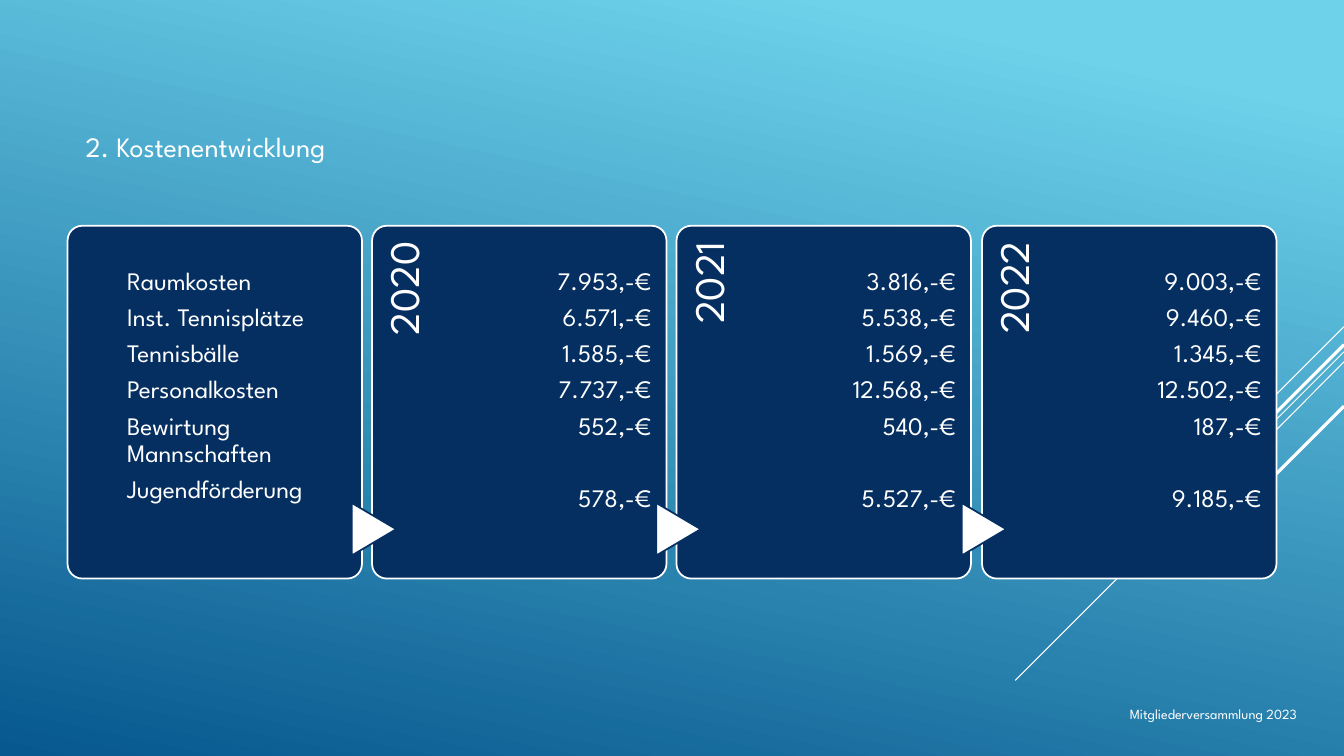
from dataclasses import dataclass

import pptx
import pptx.dml.color
import pptx.enum.dml
import pptx.enum.shapes
import pptx.enum.text
import pptx.oxml.ns
import pptx.util
from lxml import etree

ALIGN = pptx.enum.text.PP_ALIGN
SHAPE = pptx.enum.shapes.MSO_SHAPE
RGB = pptx.dml.color.RGBColor


@dataclass(frozen=True)
class Theme:
    font: str = "League Spartan"
    white: RGB = RGB(0xFF, 0xFF, 0xFF)
    navy: RGB = RGB(0x05, 0x2F, 0x61)
    sky: RGB = RGB(0x6E, 0xD2, 0xEB)
    deep: RGB = RGB(0x06, 0x58, 0x8E)
    title: int = 20
    body: int = 18
    year: int = 30
    footer: int = 10
    outline: float = 1.25


@dataclass(frozen=True)
class Box:
    left: int
    top: int
    width: int
    height: int


@dataclass(frozen=True)
class Ray:
    start: tuple[int, int]
    end: tuple[int, int]
    weight: float


@dataclass(frozen=True)
class Card:
    year: str
    entries: list[str]


THEME = Theme()
CARD_LEFT, CARD_TOP, CARD_W, CARD_H = 67, 224, 292, 350
CARD_SPAN = 907  # from the first card to the last
DEFAULT_INSETS = (10, 5, 10, 5)

RAYS = [
    Ray((1333, 324), (1233, 424), 0.75),
    Ray((1333, 349), (1007, 675), 0.75),
    Ray((1333, 359), (1126, 567), 0.75),
    Ray((1333, 342), (1142, 533), 2.25),
    Ray((1333, 403), (1194, 542), 2.25),
]
CARDS = [
    Card("", ["Raumkosten", "Inst. Tennisplätze", "Tennisbälle", "Personalkosten",
              "Bewirtung Mannschaften", "Jugendförderung"]),
    Card("2020", ["7.953,-€", "6.571,-€", "1.585,-€", "7.737,-€", "552,-€", "578,-€"]),
    Card("2021", ["3.816,-€", "5.538,-€", "1.569,-€", "12.568,-€", "540,-€", "5.527,-€"]),
    Card("2022", ["9.003,-€", "9.460,-€", "1.345,-€", "12.502,-€", "187,-€", "9.185,-€"]),
]


def px(n: int) -> pptx.util.Emu:
    return pptx.util.Emu(n * 9144)


def place(box: Box) -> list[pptx.util.Emu]:
    return [px(n) for n in (box.left, box.top, box.width, box.height)]


def add_text(s, box: Box, lines: list[str], size: int, align=ALIGN.LEFT,
             insets: tuple[int, int, int, int] = DEFAULT_INSETS):
    sp = s.shapes.add_textbox(*place(box))
    tf = sp.text_frame
    tf.word_wrap = True
    tf.margin_left, tf.margin_top, tf.margin_right, tf.margin_bottom = map(px, insets)
    for i, line in enumerate(lines):
        p = tf.paragraphs[0] if i == 0 else tf.add_paragraph()
        p.text = line
        p.alignment = align
        p.font.name = THEME.font
        p.font.size = pptx.util.Pt(size)
        p.font.color.rgb = THEME.white
    return sp


def add_shape(s, kind, box: Box, fill: RGB, line: RGB):
    sp = s.shapes.add_shape(kind, *place(box))
    sp.shadow.inherit = False
    sp.fill.solid()
    sp.fill.fore_color.rgb = fill
    sp.line.color.rgb = line
    sp.line.width = pptx.util.Pt(THEME.outline)
    return sp


def add_ray(s, ray: Ray) -> None:
    line = s.shapes.add_connector(pptx.enum.shapes.MSO_CONNECTOR.STRAIGHT,
                                  *map(px, ray.start + ray.end))
    line.line.color.rgb = THEME.white
    line.line.width = pptx.util.Pt(ray.weight)
    etree.SubElement(line._element.spPr, pptx.oxml.ns.qn("a:effectLst"))


def add_card(s, card: Card, left: int) -> None:
    panel = add_shape(s, SHAPE.ROUNDED_RECTANGLE, Box(left, CARD_TOP, CARD_W, CARD_H),
                      THEME.navy, THEME.white)
    panel.adjustments[0] = 0.05

    # Year along the left side, and the arrow from the card before
    if card.year:
        year = add_text(s, Box(left - 114, 339, 287, 58), [card.year], THEME.year,
                        ALIGN.RIGHT, (0, 11, 15, 0))
        year.rotation = 270
        year.text_frame.paragraphs[0].line_spacing = 0.9
        arrow = add_shape(s, SHAPE.FLOWCHART_EXTRACT, Box(left - 24, 503, 52, 44),
                          THEME.white, THEME.navy)
        arrow.rotation = 90

    # Entries
    sp = add_text(s, Box(left + 59, CARD_TOP, 218, CARD_H), card.entries, THEME.body,
                  ALIGN.RIGHT if card.year else ALIGN.LEFT, (0, 43, 0, 0))
    for p in sp.text_frame.paragraphs:
        p.line_spacing = 0.9
        p.space_after = pptx.util.Pt(6.3)
    if card.year:  # the label before the last one takes two lines
        p.space_before = pptx.util.Pt(25.7)


def main() -> None:
    prs = pptx.Presentation()
    prs.slide_width, prs.slide_height = px(1333), px(750)
    s = prs.slides.add_slide(prs.slide_layouts[6])

    # Background
    fill = s.background.fill
    fill.gradient()
    fill.gradient_angle = 360 - 102
    for stop, color, position in zip(fill.gradient_stops, (THEME.sky, THEME.deep), (0.1, 1)):
        stop.color.rgb = color
        stop.position = position
    for ray in RAYS:
        add_ray(s, ray)

    # Cards
    for i, card in enumerate(CARDS):
        add_card(s, card, CARD_LEFT + i * CARD_SPAN // (len(CARDS) - 1))

    # Heading and footer
    add_text(s, Box(75, 124, 1032, 551), ["2. Kostenentwicklung"], THEME.title)
    add_text(s, Box(471, 695, 825, 40), ["Mitgliederversammlung 2023"], THEME.footer, ALIGN.RIGHT)

    prs.save("out.pptx")


if __name__ == "__main__":
    main()
